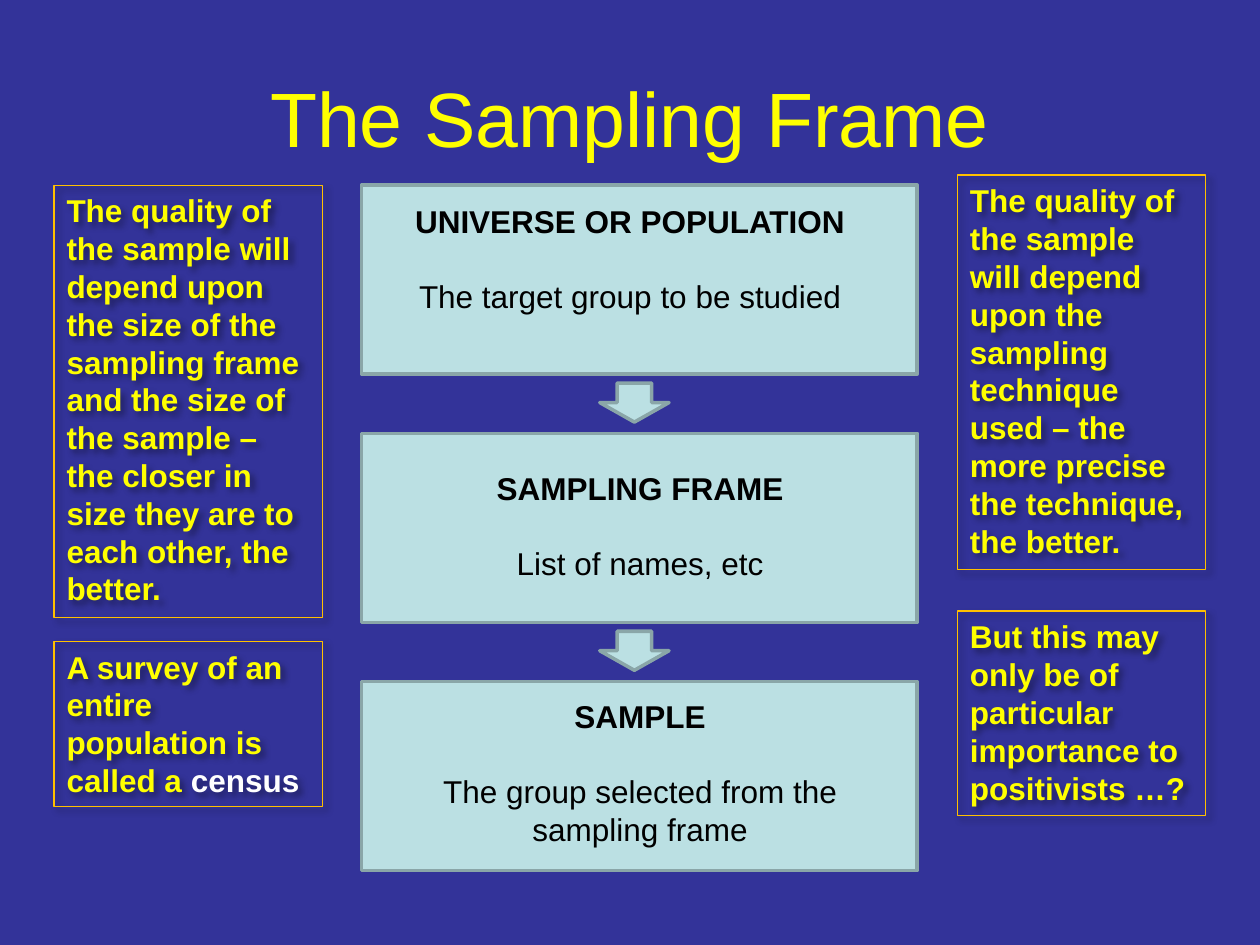
from dataclasses import dataclass

from lxml import etree
from pptx import Presentation
from pptx.dml.color import RGBColor as RGB
from pptx.enum.shapes import MSO_SHAPE as SHAPE
from pptx.enum.text import MSO_ANCHOR as ANCHOR, MSO_AUTO_SIZE as AUTO, PP_ALIGN as ALIGN
from pptx.oxml.ns import qn
from pptx.util import Inches, Pt


@dataclass(frozen=True)
class Theme:
    font: str = "Arial"
    background: RGB = RGB(0x33, 0x33, 0x99)
    heading: RGB = RGB(0xFF, 0xFF, 0x00)
    highlight: RGB = RGB(0xFF, 0xFF, 0xFF)
    label: RGB = RGB(0, 0, 0)
    stage_fill: RGB = RGB(0xBB, 0xE0, 0xE3)
    stage_line: RGB = RGB(0x8A, 0xA6, 0xA8)
    note_line: RGB = RGB(0xFF, 0xC0, 0x00)
    title_size: Pt = Pt(44)
    text_size: Pt = Pt(18)
    line_height: Pt = Pt(21.6)


theme = Theme()


def style_font(font, size, color, bold):
    font.name = theme.font
    font.size = size
    font.color.rgb = color
    font.bold = bold


def add_stage_shape(kind, left, top, width, height):
    shape = slide.shapes.add_shape(
        kind, Inches(left), Inches(top), Inches(width), Inches(height))
    shape.shadow.inherit = False
    shape.fill.solid()
    shape.fill.fore_color.rgb = theme.stage_fill
    shape.line.color.rgb = theme.stage_line
    shape.line.width = Pt(2)


prs = Presentation()
prs.slide_width, prs.slide_height = Inches(10), Inches(7.5)
slide = prs.slides.add_slide(prs.slide_layouts[5])
slide.background.fill.solid()
slide.background.fill.fore_color.rgb = theme.background

# Title
title = slide.shapes.title
title.left, title.top = Inches(0.5), Inches(0.3)
title.width, title.height = Inches(9), Inches(1.25)
title.text_frame.text = "The Sampling Frame"
title.text_frame.vertical_anchor = ANCHOR.MIDDLE
heading = title.text_frame.paragraphs[0]
heading.alignment = ALIGN.CENTER
style_font(heading.runs[0].font, theme.title_size, theme.heading, False)

# Three stages joined by down arrows
stage_top, stage_pitch = 1.47, 1.97
for step in range(3):
    add_stage_shape(SHAPE.RECTANGLE, 2.87, stage_top + step * stage_pitch, 4.41, 1.5)
for step in range(2):
    add_stage_shape(SHAPE.DOWN_ARROW, 4.76, 3.04 + step * stage_pitch, 0.55, 0.31)

# Stage names and explanations
stages = [
    (3.19, 1.55, 1.01, "UNIVERSE OR POPULATION", "The target group to be studied"),
    (3.27, 3.67, 1.01, "SAMPLING FRAME", "List of names, etc"),
    (3.27, 5.48, 1.31, "SAMPLE", "The group selected from the sampling frame"),
]
for left, top, height, name, meaning in stages:
    label = slide.shapes.add_textbox(
        Inches(left), Inches(top), Inches(3.62), Inches(height)).text_frame
    label.word_wrap = True
    label.text = f"{name}\n{meaning}"
    for paragraph, bold in zip(label.paragraphs, (True, False)):
        paragraph.alignment = ALIGN.CENTER
        style_font(paragraph.runs[0].font, theme.text_size, theme.label, bold)
    label.paragraphs[1].space_before = theme.line_height

# Outlined notes at both sides, each with a plain part and a highlighted part
notes = [
    (0.43, 1.47, 2.13, 3.43,
     "The quality of the sample will depend upon the size of the sampling frame and "
     "the size of the sample – the closer in size they are to each other, the better.", ""),
    (7.6, 1.39, 1.97, 3.13,
     "The quality of the sample will depend upon the sampling technique used – "
     "the more precise the technique, the better.", ""),
    (7.6, 4.85, 1.97, 1.62,
     "But this may only be of particular importance to positivists …?", ""),
    (0.43, 5.09, 2.13, 1.31, "A survey of an entire population is called a ", "census"),
]
for left, top, width, height, plain, highlighted in notes:
    note = slide.shapes.add_shape(
        SHAPE.RECTANGLE, Inches(left), Inches(top), Inches(width), Inches(height))
    note.fill.background()
    note.line.color.rgb = theme.note_line
    note.line.width = Pt(0.75)

    # Soft shadow to the lower right
    note.shadow.inherit = False
    effects = note.element.spPr.find(qn("a:effectLst"))
    shadow = etree.SubElement(
        effects, qn("a:outerShdw"), blurRad=str(Pt(4)), dist=str(Pt(3)),
        dir=str(45 * 60000), algn="tl", rotWithShape="0")
    shadow_color = etree.SubElement(shadow, qn("a:srgbClr"), val="000000")
    etree.SubElement(shadow_color, qn("a:alpha"), val="40000")

    frame = note.text_frame
    frame.word_wrap = True
    frame.auto_size = AUTO.SHAPE_TO_FIT_TEXT
    frame.vertical_anchor = ANCHOR.TOP
    sentence = frame.paragraphs[0]
    sentence.alignment = ALIGN.LEFT
    for words, color in ((plain, theme.heading), (highlighted, theme.highlight)):
        if words:
            run = sentence.add_run()
            run.text = words
            style_font(run.font, theme.text_size, color, True)

prs.save("out.pptx")
